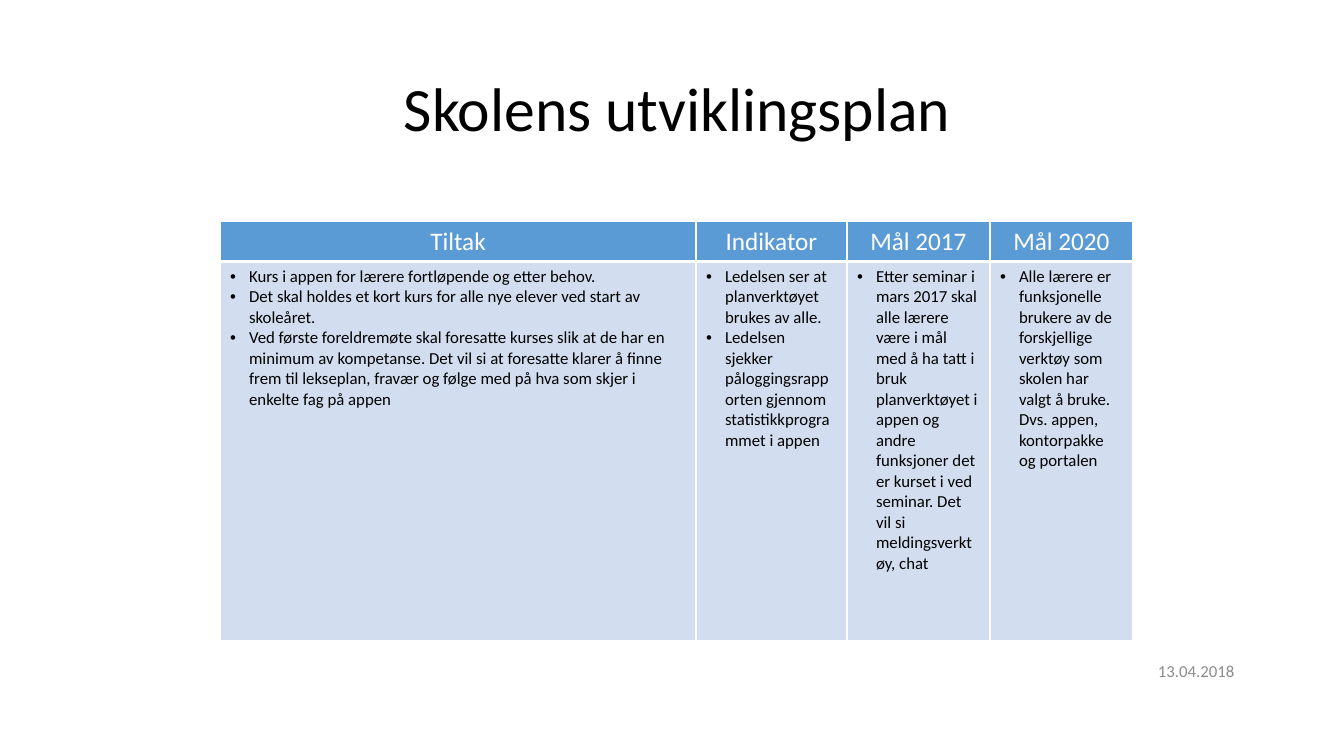
from lxml.etree import SubElement
from pptx import Presentation
from pptx.dml.color import RGBColor
from pptx.enum.text import MSO_ANCHOR, PP_ALIGN
from pptx.oxml.ns import qn
from pptx.util import Emu, Pt

SCALE = 914400 / 100.8
FONT = "Calibri"
COLORS = {
    "black": "000000",
    "white": "FFFFFF",
    "date": "8C8C8C",
    "header": "5B9BD5",
    "body": "D2DEEF",
}
COLUMN_WIDTHS = [476, 151, 143, 143]
HEADER_HEIGHT = 40
BODY_HEIGHT = 379
BULLET_INDENT = 19
THIN, THICK = 1, 3

PLAN = {
    "Tiltak": [
        "Kurs i appen for lærere fortløpende og etter behov.",
        "Det skal holdes et kort kurs for alle nye elever ved start av skoleåret.",
        "Ved første foreldremøte skal foresatte kurses slik at de har en minimum "
        "av kompetanse. Det vil si at foresatte klarer å finne frem til lekseplan, "
        "fravær og følge med på hva som skjer i enkelte fag på appen",
    ],
    "Indikator": [
        "Ledelsen ser at planverktøyet brukes av alle.",
        "Ledelsen sjekker påloggingsrapporten gjennom statistikkprogra mmet i appen",
    ],
    "Mål 2017": [
        "Etter seminar i mars 2017 skal alle lærere være i mål med å ha tatt i bruk "
        "planverktøyet i appen og andre funksjoner det er kurset i ved seminar. "
        "Det vil si meldingsverkt øy, chat",
    ],
    "Mål 2020": [
        "Alle lærere er funksjonelle brukere av de forskjellige verktøy som skolen "
        "har valgt å bruke. Dvs. appen, kontorpakke og portalen",
    ],
}


def px(length):
    return Emu(round(length * SCALE))


def color(name):
    return RGBColor.from_string(COLORS[name])


def style(para, size, color_name, align=PP_ALIGN.LEFT):
    para.alignment = align
    para.font.name = FONT
    para.font.size = Pt(size)
    para.font.bold = False
    para.font.color.rgb = color(color_name)


def add_title(page, text):
    title = page.shapes.title
    title.left, title.top, title.width, title.height = map(px, (69, 52, 1217, 119))
    frame = title.text_frame
    frame.text = text
    frame.vertical_anchor = MSO_ANCHOR.MIDDLE
    para = frame.paragraphs[0]
    para.line_spacing = 0.9
    style(para, 44, "black", PP_ALIGN.CENTER)


def add_date(page, text):
    box = page.shapes.add_textbox(*map(px, (1148, 651, 163, 40)))
    frame = box.text_frame
    frame.word_wrap = True
    frame.vertical_anchor = MSO_ANCHOR.MIDDLE
    frame.text = text
    style(frame.paragraphs[0], 12, "date")


def set_cell_look(cell, fill_name, top, bottom):
    properties = cell._tc.get_or_add_tcPr()
    for side, width in (("L", THIN), ("R", THIN), ("T", top), ("B", bottom)):
        line = SubElement(properties, qn(f"a:ln{side}"), w=str(Pt(width)))
        fill = SubElement(line, qn("a:solidFill"))
        SubElement(fill, qn("a:srgbClr"), val=COLORS["white"])
    cell.fill.solid()
    cell.fill.fore_color.rgb = color(fill_name)


def set_bullet(para):
    properties = para._p.get_or_add_pPr()
    properties.set("marL", str(px(BULLET_INDENT)))
    properties.set("indent", str(-px(BULLET_INDENT)))
    SubElement(properties, qn("a:buFont"), typeface="Arial")
    SubElement(properties, qn("a:buChar"), char="•")


def fill_header(cell, text):
    set_cell_look(cell, "header", THIN, THICK)
    cell.text = text
    style(cell.text_frame.paragraphs[0], 18, "white", PP_ALIGN.CENTER)


def fill_body(cell, items):
    set_cell_look(cell, "body", THICK, THIN)
    cell.text = "\n".join(items)
    for para in cell.text_frame.paragraphs:
        set_bullet(para)
        style(para, 12, "black")


def add_plan_table(page):
    width, height = sum(COLUMN_WIDTHS), HEADER_HEIGHT + BODY_HEIGHT
    frame = page.shapes.add_table(2, len(PLAN), *map(px, (220, 221, width, height)))
    table = frame.table
    table.rows[0].height = px(HEADER_HEIGHT)
    table.rows[1].height = px(BODY_HEIGHT)
    for index, (heading, items) in enumerate(PLAN.items()):
        table.columns[index].width = px(COLUMN_WIDTHS[index])
        fill_header(table.cell(0, index), heading)
        fill_body(table.cell(1, index), items)


def main():
    deck = Presentation()
    deck.slide_width, deck.slide_height = px(1344), px(756)
    page = deck.slides.add_slide(deck.slide_layouts[5])
    add_date(page, "13.04.2018")
    add_title(page, "Skolens utviklingsplan")
    add_plan_table(page)
    deck.save("out.pptx")


if __name__ == "__main__":
    main()
